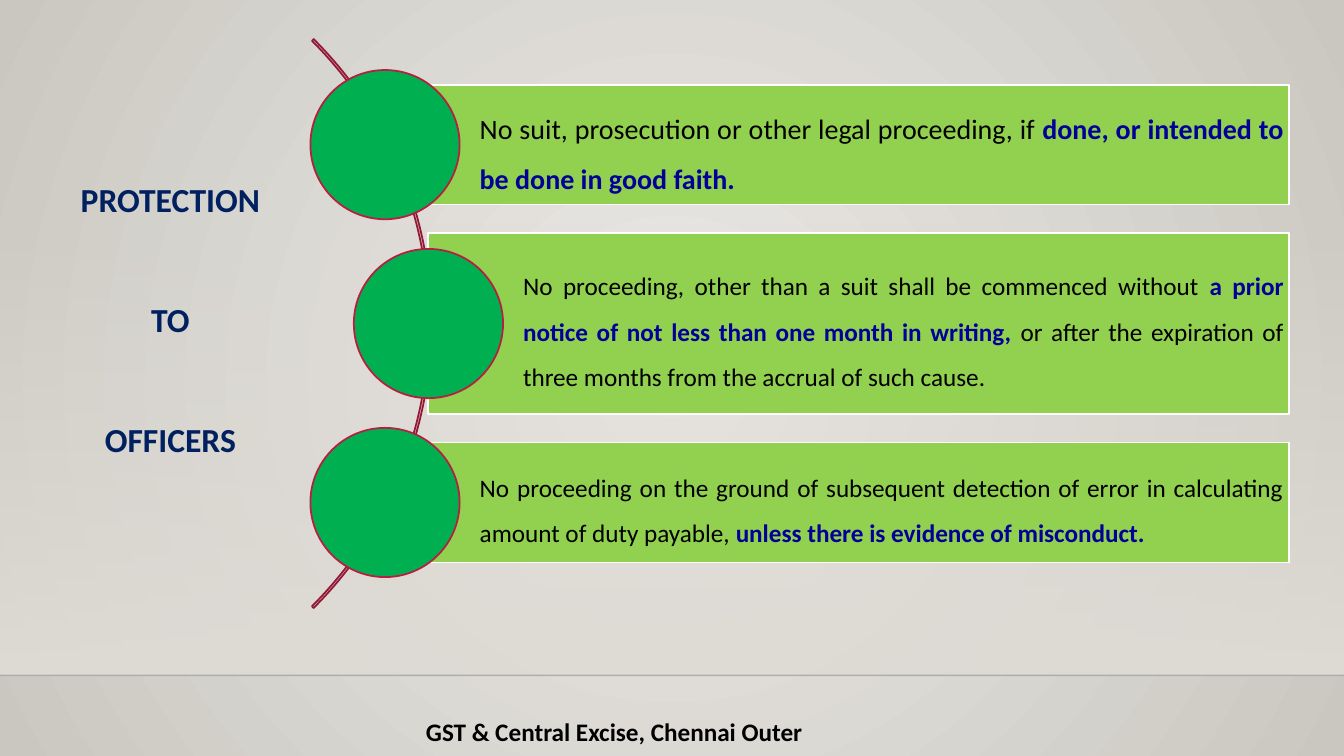
from lxml import etree
from pptx import Presentation
from pptx.dml.color import RGBColor
from pptx.enum.shapes import MSO_CONNECTOR, MSO_SHAPE
from pptx.enum.text import MSO_ANCHOR, MSO_AUTO_SIZE, PP_ALIGN
from pptx.oxml.ns import qn
from pptx.util import Pt

RECTANGLE, OVAL, BLOCK_ARC = MSO_SHAPE.RECTANGLE, MSO_SHAPE.OVAL, MSO_SHAPE.BLOCK_ARC
STRAIGHT = MSO_CONNECTOR.STRAIGHT
TOP, MIDDLE, BOTTOM = MSO_ANCHOR.TOP, MSO_ANCHOR.MIDDLE, MSO_ANCHOR.BOTTOM
CENTER, JUSTIFY = PP_ALIGN.CENTER, PP_ALIGN.JUSTIFY
NO_AUTOFIT = MSO_AUTO_SIZE.NONE

WIDTH, HEIGHT = 960, 540
FLOOR_TOP = 482.4
BLACK, NAVY = "000000", "000099"


def write_span(para, text, size=18, color=BLACK, bold=False):
    span = para.add_run()
    span.text = text
    span.font.name = "Calibri"
    span.font.size = Pt(size)
    span.font.bold = bold
    span.font.color.rgb = RGBColor.from_string(color)


def add_shape(kind, left, top, width, height, fill=None, line=None):
    shape = page.shapes.add_shape(kind, Pt(left), Pt(top), Pt(width), Pt(height))
    shape.shadow.inherit = False
    if fill:
        shape.fill.solid()
        shape.fill.fore_color.rgb = RGBColor.from_string(fill)
    else:
        shape.fill.background()
    if line:
        shape.line.color.rgb = RGBColor.from_string(line)
        shape.line.width = Pt(1.25)
    else:
        shape.line.fill.background()
    return shape


deck = Presentation()
deck.slide_width, deck.slide_height = Pt(WIDTH), Pt(HEIGHT)
page = deck.slides.add_slide(deck.slide_layouts[5])

backdrop = page.background.fill
backdrop.gradient()
for stop, color in zip(backdrop.gradient_stops, ("ECEAE7", "CAC7C1")):
    stop.color.rgb = RGBColor.from_string(color)
backdrop.gradient_stops[0].position = 0
backdrop.gradient_stops[1].position = 1
linear = next(page.element.iter(qn("a:lin")))
circle_path = etree.Element(qn("a:path"), path="circle")
etree.SubElement(circle_path, qn("a:fillToRect"), l="50000", t="50000", r="50000", b="50000")
linear.getparent().replace(linear, circle_path)

haze = add_shape(RECTANGLE, 0, 159, WIDTH, FLOOR_TOP - 159)
haze.fill.gradient()
haze.fill.gradient_angle = 270
for stop, position in zip(haze.fill.gradient_stops, (0, 1)):
    stop.color.rgb = RGBColor.from_string("DFDBD5")
    stop.position = position
first_color = next(haze.element.iter(qn("a:srgbClr")))
etree.SubElement(first_color, qn("a:alpha"), val="0")

floor_line = page.shapes.add_connector(STRAIGHT, 0, Pt(FLOOR_TOP), Pt(WIDTH), Pt(FLOOR_TOP))
floor_line.line.width = Pt(1)
floor_line.line.color.rgb = RGBColor.from_string("000001")
line_color = next(floor_line.element.iter(qn("a:srgbClr")))
etree.SubElement(line_color, qn("a:alpha"), val="20000")
etree.SubElement(floor_line.element.spPr, qn("a:effectLst"))

footer = page.shapes.add_textbox(Pt(220.3), Pt(486), Pt(437), Pt(51)).text_frame
footer.word_wrap = True
footer.vertical_anchor = BOTTOM
footer.paragraphs[0].alignment = CENTER
write_span(footer.paragraphs[0], "GST & Central Excise, Chennai Outer", bold=True)

arc = add_shape(BLOCK_ARC, -266.4, -56.2, 574.6, 574.6, line="931835")
for index, value in enumerate((189, 27, 0.003)):
    arc.adjustments[index] = value

DIAMETER = 106.6
BAR_RIGHT = 920.9
CENTER_Y, PITCH = 231.1, 127.8
provisions = [
    (275, 85.7, 20, [
        ("No suit, prosecution or other legal proceeding, if ", False),
        ("done, or intended to be done in good faith.", True)]),
    (306, 129.6, 18, [
        ("No proceeding, other than a suit shall be commenced without ", False),
        ("a prior notice of not less than one month in writing,", True),
        (" or after the expiration of three months from the accrual of such cause.", False)]),
    (275, 85.7, 18, [
        ("No proceeding on the ground of subsequent detection of error in calculating "
         "amount of duty payable, ", False),
        ("unless there is evidence of misconduct.", True)]),
]
for index, (left, height, size, spans) in enumerate(provisions):
    middle = CENTER_Y + (index - 1) * PITCH
    bar = add_shape(RECTANGLE, left, middle - height / 2, BAR_RIGHT - left, height,
                    fill="92D050", line="FFFFFF")
    frame = bar.text_frame
    frame.word_wrap = True
    frame.vertical_anchor = MIDDLE
    frame.margin_left = Pt(67.7)
    frame.margin_right = frame.margin_top = frame.margin_bottom = Pt(4)
    para = frame.paragraphs[0]
    para.alignment = JUSTIFY
    para.line_spacing = 1.5
    for text, key in spans:
        write_span(para, text, size=size, color=NAVY if key else BLACK, bold=key)
    add_shape(OVAL, left - DIAMETER / 2, middle - DIAMETER / 2, DIAMETER, DIAMETER,
              fill="00B050", line="B71E42")

title = page.shapes.title
title.left, title.top, title.width, title.height = Pt(27.4), Pt(124), Pt(188.6), Pt(211)
title.element.getparent().append(title.element)
heading = title.text_frame
heading.auto_size = NO_AUTOFIT
heading.word_wrap = True
heading.vertical_anchor = TOP
for index, word in enumerate(("PROTECTION", "TO", "OFFICERS")):
    para = heading.add_paragraph() if index else heading.paragraphs[0]
    para.alignment = CENTER
    para.line_spacing = 1.0
    if index:
        para.space_before = Pt(57)
    write_span(para, word, size=24, color="002060", bold=True)

deck.save("out.pptx")
